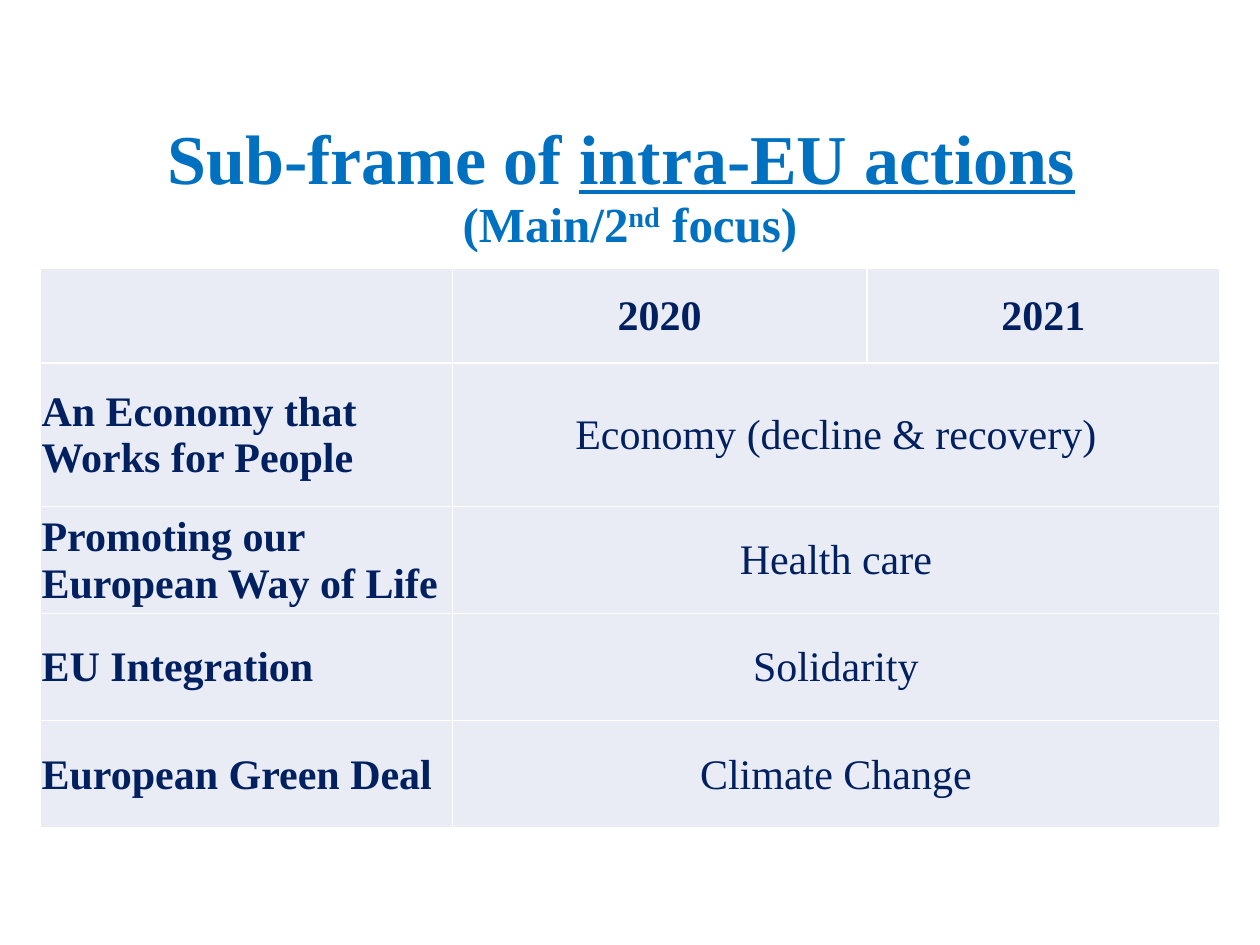
"""Build a slide with a title and a table of sub-frames by year."""
import pptx
import pptx.util
import pptx.dml.color
import pptx.enum.text
import pptx.oxml
import pptx.oxml.ns

Inch, Pt = pptx.util.Inches, pptx.util.Pt
ALIGN, ANCHOR = pptx.enum.text.PP_ALIGN, pptx.enum.text.MSO_ANCHOR

FONT = "Times New Roman"
BLUE, NAVY, PALE, WHITE = "0070C0", "002060", "E9EBF5", "FFFFFF"
TITLE = [
    [("Sub-frame of ", 40, {}), ("intra-EU actions", 40, {"u": "sng"}), (" ", 40, {})],
    [("(Main/2", 28, {}), ("nd", 28, {"baseline": "30000"}), (" focus)", 28, {})],
]
YEARS = ["", "2020", "2021"]
TOPICS = [
    ("An Economy that Works for People", "Economy (decline & recovery)"),
    ("Promoting our European Way of Life", "Health care"),
    ("EU Integration", "Solidarity"),
    ("European Green Deal", "Climate Change"),
]
COLS = [3.27, 3.29, 2.8]
ROWS = [0.75, 1.14] + [0.85] * 3
LEFT, TOP, WIDE = 0.32, 2.13, sum(COLS)
HEAD = 1.27


def paint(hue):
    """Turn a hex string into a colour."""
    return pptx.dml.color.RGBColor.from_string(hue)


def write(para, text, size, hue, bold=True, marks=None):
    """Add one run of text to a paragraph."""
    run = para.add_run()
    run.text = text
    font = run.font
    font.name, font.size, font.bold = FONT, Pt(size), bold
    font.color.rgb = paint(hue)
    for key, val in (marks or {}).items():
        font._element.set(key, val)


def edge(cell):
    """Give a cell thin white borders."""
    props = cell._tc.get_or_add_tcPr()
    for spot, side in enumerate("LRTB"):
        props.insert(spot, pptx.oxml.parse_xml(
            f'<a:ln{side} {pptx.oxml.ns.nsdecls("a")} w="12700"><a:solidFill>'
            f'<a:srgbClr val="{WHITE}"/></a:solidFill></a:ln{side}>'))


def fill(cell, text, bold, align):
    """Style a cell and write its text."""
    cell.vertical_anchor = ANCHOR.MIDDLE
    cell.margin_left = cell.margin_right = cell.margin_top = Inch(0.01)
    cell.margin_bottom = 0
    para = cell.text_frame.paragraphs[0]
    para.alignment = align
    if text:
        write(para, text, 24, NAVY, bold)


def add_title(slide):
    """Add the two-line title above the table."""
    box = slide.shapes.add_textbox(Inch(LEFT), Inch(TOP - HEAD), Inch(WIDE), Inch(HEAD))
    frame = box.text_frame
    frame.word_wrap = True
    frame.vertical_anchor = ANCHOR.MIDDLE
    para = frame.paragraphs[0]
    para.alignment, para.line_spacing = ALIGN.CENTER, 0.9
    for row, line in enumerate(TITLE):
        if row:
            para.add_line_break()
        for text, size, marks in line:
            write(para, text, size, BLUE, marks=marks)


def add_grid(slide):
    """Add the table, with each topic merged over both years."""
    grid = slide.shapes.add_table(len(ROWS), len(COLS), Inch(LEFT), Inch(TOP),
                                  Inch(WIDE), Inch(sum(ROWS))).table
    for col, width in zip(grid.columns, COLS):
        col.width = Inch(width)
    for row, height in zip(grid.rows, ROWS):
        row.height = Inch(height)
    for cell in grid.iter_cells():
        cell.fill.solid()
        cell.fill.fore_color.rgb = paint(PALE)
        edge(cell)
    for col, year in enumerate(YEARS):
        fill(grid.cell(0, col), year, True, ALIGN.CENTER)
    for row, (name, topic) in enumerate(TOPICS, 1):
        grid.cell(row, 1).merge(grid.cell(row, 2))
        fill(grid.cell(row, 0), name, True, ALIGN.LEFT)
        fill(grid.cell(row, 1), topic, False, ALIGN.CENTER)


def main():
    """Build and save the slide."""
    deck = pptx.Presentation()
    deck.slide_width, deck.slide_height = Inch(10), Inch(7.5)
    slide = deck.slides.add_slide(deck.slide_layouts[6])
    add_title(slide)
    add_grid(slide)
    deck.save("out.pptx")


if __name__ == "__main__":
    main()
